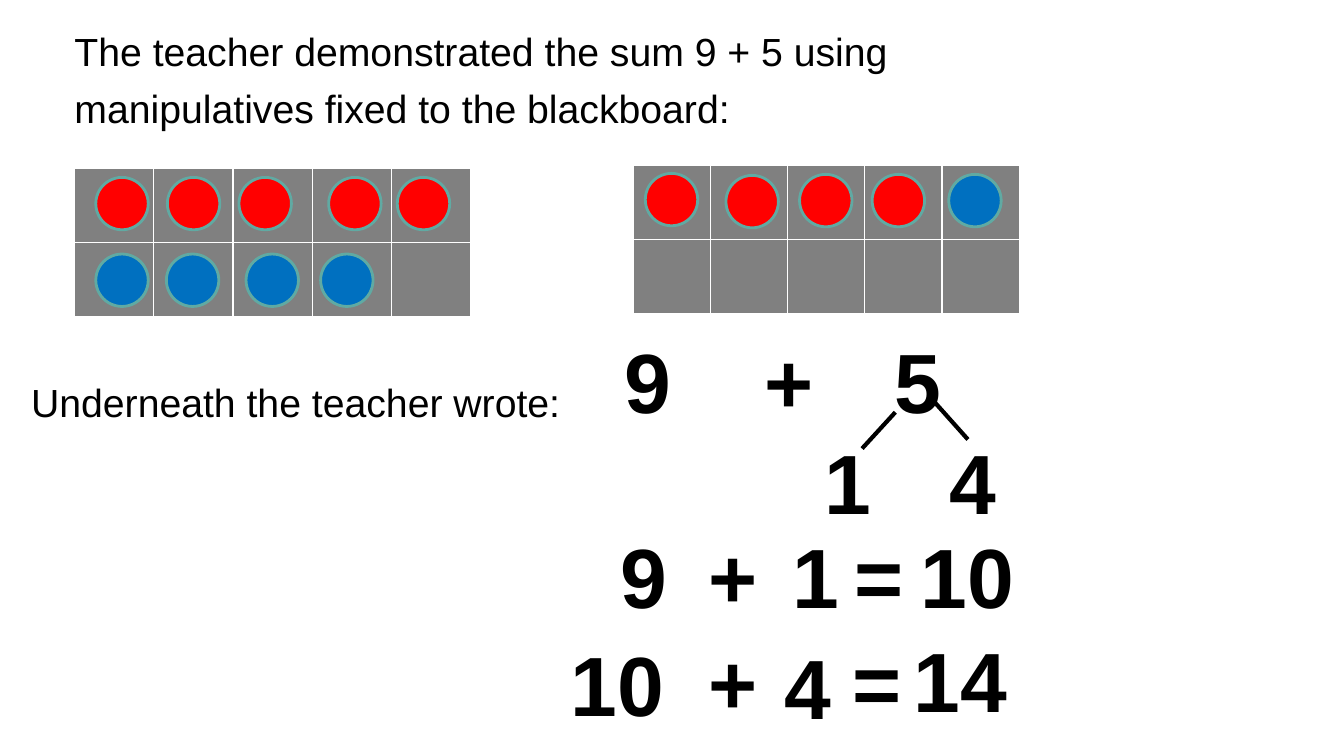
from lxml import etree
from pptx import Presentation
from pptx.dml.color import RGBColor
from pptx.enum.shapes import MSO_CONNECTOR, MSO_SHAPE
from pptx.oxml.ns import qn
from pptx.util import Inches, Pt

OVAL = MSO_SHAPE.OVAL
STRAIGHT = MSO_CONNECTOR.STRAIGHT
RED, BLUE, TEAL = "FF0000", "0070C0", "60AAA3"
GREY, WHITE, BLACK = "808080", "FFFFFF", "000000"


def rgb(value):
    return RGBColor.from_string(value)


def add_text(left, top, width, height, lines, size, bold=False):
    box = slide.shapes.add_textbox(Inches(left), Inches(top), Inches(width), Inches(height))
    frame = box.text_frame
    frame.word_wrap = True
    frame.margin_top = Inches(0.05 + size / 720)
    for index, line in enumerate(lines):
        paragraph = frame.add_paragraph() if index else frame.paragraphs[0]
        if index:
            paragraph.space_before = Pt(size / 4)
        run = paragraph.add_run()
        run.text = line
        run.font.name = "Arial"
        run.font.size = Pt(size)
        run.font.bold = bold
        run.font.color.rgb = rgb(BLACK)


prs = Presentation()
prs.slide_width = Inches(13.33)
prs.slide_height = Inches(7.5)
slide = prs.slides.add_slide(prs.slide_layouts[6])

for left, top, width in [(6.28, 1.64, 3.83), (0.74, 1.67, 3.93)]:
    ten_frame = slide.shapes.add_table(
        2, 5, Inches(left), Inches(top), Inches(width), Inches(1.47)).table
    for cell in ten_frame.iter_cells():
        properties = cell._tc.get_or_add_tcPr()
        for side in ("lnL", "lnR", "lnT", "lnB"):
            border = etree.SubElement(properties, qn(f"a:{side}"), w=str(Pt(1)))
            border_fill = etree.SubElement(border, qn("a:solidFill"))
            etree.SubElement(border_fill, qn("a:srgbClr"), val=WHITE)
        cell.fill.solid()
        cell.fill.fore_color.rgb = rgb(GREY)

counter_rows = [
    (RED, 1.76, [0.95, 1.66, 2.37, 3.26, 3.94]),
    (BLUE, 2.52, [0.95, 1.65, 2.44, 3.18]),
    (RED, 1.72, [6.4]),
    (RED, 1.74, [7.2]),
    (RED, 1.73, [7.93, 8.65]),
    (BLUE, 1.73, [9.41]),
]
for color, top, lefts in counter_rows:
    for left in lefts:
        counter = slide.shapes.add_shape(
            OVAL, Inches(left), Inches(top), Inches(0.52), Inches(0.52))
        counter.shadow.inherit = False
        counter.fill.solid()
        counter.fill.fore_color.rgb = rgb(color)
        counter.line.color.rgb = rgb(TEAL)
        counter.line.width = Pt(2)

sum_parts = [
    ("9", 6.1, 3.14, 0.76), ("+", 7.48, 3.14, 0.76), ("5", 8.77, 3.14, 0.76),
    ("1", 8.08, 4.14, 0.76), ("4", 9.32, 4.14, 0.76),
    ("9", 6.06, 5.07, 0.76), ("+", 6.93, 5.07, 0.76), ("1", 7.76, 5.07, 0.76),
    ("=", 8.38, 5.07, 0.76), ("10", 9.03, 5.07, 2.36),
    ("10", 5.56, 6.14, 1.31), ("+", 6.93, 6.12, 0.76), ("4", 7.68, 6.17, 0.96),
    ("=", 8.36, 6.12, 0.76), ("14", 8.96, 6.1, 2.12),
]
for symbol, left, top, width in sum_parts:
    add_text(left, top, width, 1.11, [symbol], 60, bold=True)

for x1, y1, x2, y2 in [(9.27, 3.99, 9.6, 4.36), (8.88, 4.09, 8.55, 4.45)]:
    branch = slide.shapes.add_connector(
        STRAIGHT, Inches(x1), Inches(y1), Inches(x2), Inches(y2))
    branch.line.color.rgb = rgb(BLACK)
    branch.line.width = Pt(3)
    etree.SubElement(branch._element.spPr, qn("a:effectLst"))

add_text(0.64, 0.18, 9.38, 1.14, [
    "The teacher demonstrated the sum 9 + 5 using",
    "manipulatives fixed to the blackboard:",
], 28)
add_text(0.21, 3.66, 5.51, 0.57, ["Underneath the teacher wrote:"], 28)

prs.save("out.pptx")
